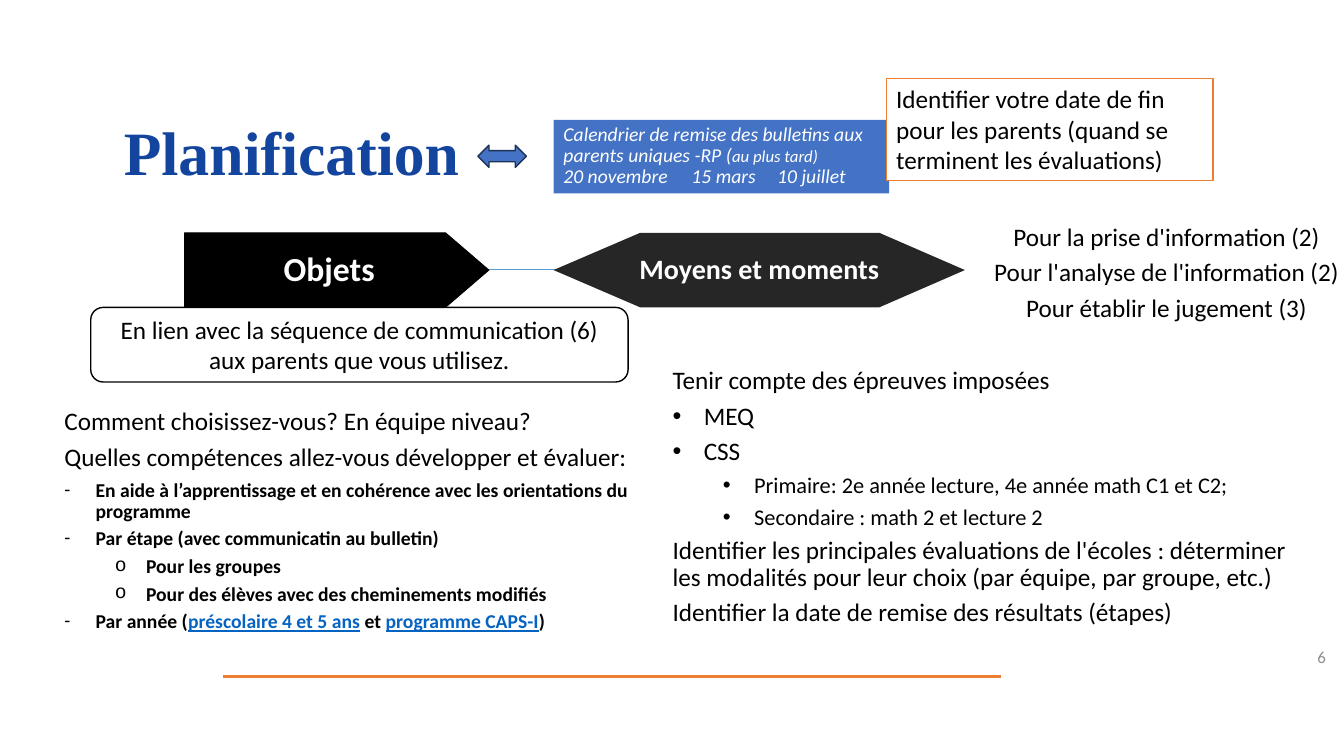
"""Build the slide on planning objects, means and moments of evaluation."""
from lxml.etree import SubElement
from pptx import Presentation
from pptx.dml.color import RGBColor
from pptx.enum.shapes import MSO_CONNECTOR, MSO_SHAPE
from pptx.enum.text import MSO_ANCHOR, PP_ALIGN
from pptx.oxml.ns import qn
from pptx.util import Inches, Pt

COLORS = {
    "black": "000000", "charcoal": "262626", "white": "FFFFFF",
    "orange": "ED7D31", "blue": "4472C4", "navy": "1E3256",
    "sky": "5B9BD5", "title": "13459F", "link": "0563C1", "gray": "8C8C8C",
}
BULLET_FONTS = {"•": "Arial", "-": "Calibri", "o": "Courier New"}
LINK = {"color": "link", "underline": True}


def paint(shape, fill=None, line=None, width=1):
    shape.shadow.inherit = False
    if fill:
        shape.fill.solid()
        shape.fill.fore_color.rgb = RGBColor.from_string(COLORS[fill])
    else:
        shape.fill.background()
    if line:
        shape.line.color.rgb = RGBColor.from_string(COLORS[line])
        shape.line.width = Pt(width)
    else:
        shape.line.fill.background()
    return shape


def write(shape, paragraphs, size=18, color="black", align=PP_ALIGN.LEFT,
          anchor=MSO_ANCHOR.TOP, insets=(0.1, 0.05, 0.1, 0.05),
          spacing=0.9, gap=0.33, tabs=(), **font):
    frame = shape.text_frame
    frame.word_wrap = True
    frame.vertical_anchor = anchor
    for side, inset in zip(("left", "top", "right", "bottom"), insets):
        setattr(frame, f"margin_{side}", Inches(inset))
    for index, (content, bullet, level, changes) in enumerate(paragraphs):
        paragraph = frame.add_paragraph() if index else frame.paragraphs[0]
        properties = paragraph._p.get_or_add_pPr()
        if bullet:
            properties.set("marL", str(Inches(0.31 + 0.5 * level)))
            properties.set("indent", str(Inches(-0.31)))
            SubElement(properties, qn("a:buFont"), typeface=BULLET_FONTS[bullet])
            SubElement(properties, qn("a:buChar"), char=bullet)
        if tabs:
            stops = SubElement(properties, qn("a:tabLst"))
            for stop in tabs:
                SubElement(stops, qn("a:tab"), pos=str(Inches(stop)), algn="l")
        style = {"name": "Calibri", "size": size, "color": color, **font, **changes}
        layout = {"alignment": align, "level": level, "line_spacing": spacing,
                  "space_after": Pt(round(gap * style["size"], 1))}
        for attribute, value in layout.items():
            setattr(paragraph, attribute, value)
        for words, accents in [(content, {})] if isinstance(content, str) else content:
            values = {**style, **accents}
            run = paragraph.add_run()
            run.text = words
            run.font.color.rgb = RGBColor.from_string(COLORS[values.pop("color")])
            values["size"] = Pt(values["size"])
            for attribute, value in values.items():
                setattr(run.font, attribute, value)


deck = Presentation()
deck.slide_width, deck.slide_height = Inches(13.33), Inches(7.5)
shapes = deck.slides.add_slide(deck.slide_layouts[6]).shapes

rules = [(2.21, 6.71, 9.93, "orange", 2.25), (4.85, 2.67, 5.53, "sky", 0.5)]
for start, height, end, color, width in rules:
    rule = shapes.add_connector(MSO_CONNECTOR.STRAIGHT, Inches(start), Inches(height),
                                Inches(end), Inches(height))
    rule.line.color.rgb = RGBColor.from_string(COLORS[color])
    rule.line.width = Pt(width)
    SubElement(rule._element.spPr, qn("a:effectLst"))

top, middle, bottom = 2.31, 2.68, 3.05
steps = [
    ("Objets", 24, "black", "black", (0.12, 0.12, 0.27, 0.12),
     [(1.83, top), (4.42, top), (4.85, middle), (4.42, bottom), (1.83, bottom)]),
    ("Moyens et moments", 20, "charcoal", None, (0.34, 0.24, 0.34, 0.24),
     [(5.49, middle), (6.35, top), (8.72, top), (9.57, middle), (8.72, bottom),
      (6.35, bottom)]),
]
for label, size, fill, line, insets, corners in steps:
    points = [(Inches(x), Inches(y)) for x, y in corners]
    outline = shapes.build_freeform(*points[0])
    outline.add_line_segments(points[1:], close=True)
    step = paint(outline.convert_to_shape(), fill, line, 0.5)
    write(step, [(label, None, 0, {})], size, "white", PP_ALIGN.CENTER,
          MSO_ANCHOR.MIDDLE, insets, bold=True)

small = {"size": 14, "bold": True}
medium = {"size": 16}
exams = [
    ("Tenir compte des épreuves imposées", None, 0, {}),
    ("MEQ", "•", 0, {}),
    ("CSS", "•", 0, {}),
    ("Primaire: 2e année lecture, 4e année math C1 et C2;", "•", 1, medium),
    ("Secondaire : math 2 et lecture 2", "•", 1, medium),
    ("Identifier les principales évaluations de l'écoles : déterminer les modalités "
     "pour leur choix (par équipe, par groupe, etc.)", None, 0, {}),
    ("Identifier la date de remise des résultats (étapes)", None, 0, {}),
]
purposes = [(words, None, 0, {}) for words in (
    "Pour la prise d'information (2)",
    "Pour l'analyse de l'information (2)",
    "Pour établir le jugement (3)",
)]
choices = [
    ("Comment choisissez-vous? En équipe niveau?", None, 0, {}),
    ("Quelles compétences allez-vous développer et évaluer:", None, 0, {}),
    ("En aide à l’apprentissage et en cohérence avec les orientations du programme",
     "-", 0, small),
    ("Par étape (avec communicatin au bulletin)", "-", 0, small),
    ("Pour les groupes", "o", 1, small),
    ("Pour des élèves avec des cheminements modifiés", "o", 1, small),
    ([("Par année (", {}), ("préscolaire 4 et 5 ans", LINK), (" et ", {}),
      ("programme CAPS-I", LINK), (")", {})], "-", 0, small),
]
sequence = [("En lien avec la séquence de communication (6) aux parents que vous utilisez.",
             None, 0, {})]
calendar = [
    ([("Calendrier de remise des bulletins aux parents uniques -RP (", {}),
      ("au plus tard)", {"size": 12})], None, 0, {}),
    ("20 novembre\t15 mars\t10 juillet", None, 0, {}),
]
deadline = [("Identifier votre date de fin pour les parents (quand se terminent les "
             "évaluations)", None, 0, {})]

padded = {"insets": (0, 0.19, 0, 0.19)}
centered = {"anchor": MSO_ANCHOR.MIDDLE, "spacing": 1.0, "gap": 0}
panels = [
    (MSO_SHAPE.RECTANGLE, (6.67, 3.46, 6.15, 2.86), {}, exams, padded),
    (MSO_SHAPE.RECTANGLE, (9.81, 1.75, 3.52, 1.64), {}, purposes,
     {**padded, "align": PP_ALIGN.CENTER, "anchor": MSO_ANCHOR.BOTTOM}),
    (MSO_SHAPE.RECTANGLE, (1.13, 1.16, 3.83, 0.77), {},
     [("Planification", None, 0, {})],
     {**centered, "spacing": 0.9, "size": 44, "color": "title",
      "name": "Times New Roman", "bold": True}),
    (MSO_SHAPE.RECTANGLE, (10.25, 6.32, 3, 0.4), {}, [("6", None, 0, {})],
     {**centered, "size": 12, "color": "gray", "align": PP_ALIGN.RIGHT}),
    (MSO_SHAPE.RECTANGLE, (0.54, 4.01, 5.91, 2.46), {"fill": "white"}, choices, {}),
    (MSO_SHAPE.ROUNDED_RECTANGLE, (0.9, 3.05, 5.33, 0.74),
     {"fill": "white", "line": "black"}, sequence,
     {**centered, "align": PP_ALIGN.CENTER}),
    (MSO_SHAPE.RECTANGLE, (5.49, 1.19, 3.33, 0.73), {"fill": "blue"}, calendar,
     {"size": 14, "color": "white", "spacing": Pt(15), "gap": 0,
      "tabs": (1.27, 2.12), "italic": True}),
    (MSO_SHAPE.LEFT_RIGHT_ARROW, (4.74, 1.44, 0.48, 0.22),
     {"fill": "blue", "line": "navy"}, [], {}),
    (MSO_SHAPE.RECTANGLE, (8.79, 0.78, 3.24, 1.01),
     {"fill": "white", "line": "orange"}, deadline, {"spacing": 1.0, "gap": 0}),
]
for outline, place, look, paragraphs, style in panels:
    panel = paint(shapes.add_shape(outline, *map(Inches, place)), **look)
    write(panel, paragraphs, **style)

deck.save("out.pptx")
